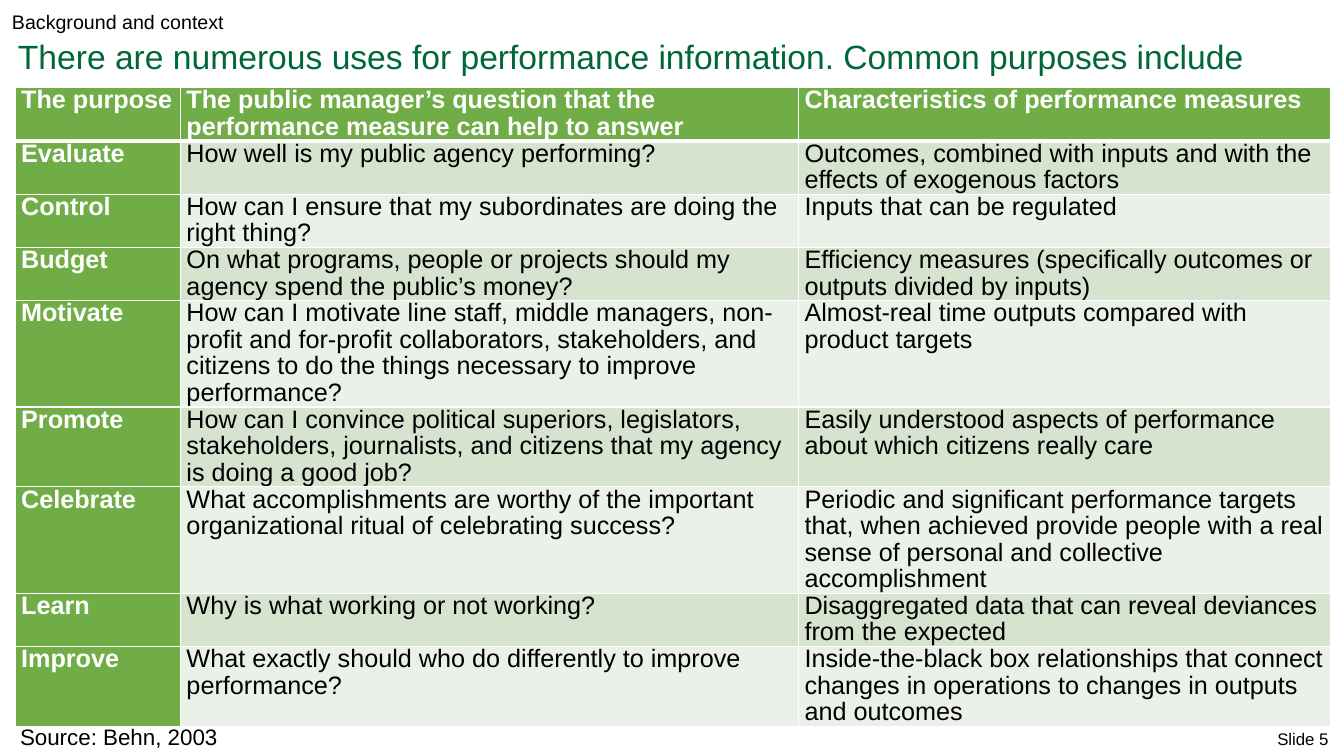
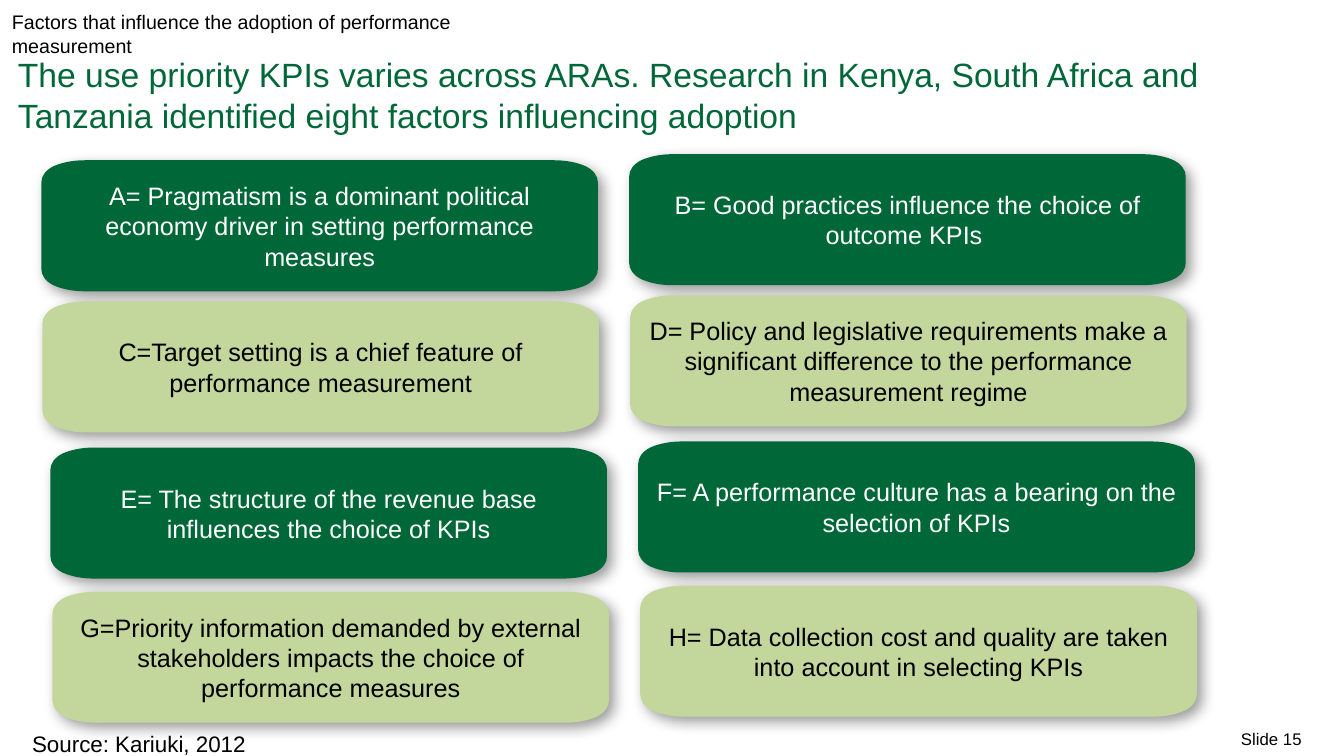
from lxml import etree
from pptx import Presentation
from pptx.dml.color import RGBColor
from pptx.enum.text import MSO_ANCHOR, PP_ALIGN
from pptx.oxml import parse_xml
from pptx.oxml.ns import qn
from pptx.util import Pt

PX = 9144
FONT = "Arial"
MIDDLE, TOP = MSO_ANCHOR.MIDDLE, MSO_ANCHOR.TOP
LEFT, CENTER = PP_ALIGN.LEFT, PP_ALIGN.CENTER
BLACK = RGBColor(0x00, 0x00, 0x00)
WHITE = RGBColor(0xFF, 0xFF, 0xFF)
DARK_GREEN = RGBColor(0x00, 0x68, 0x38)
LIGHT_GREEN = RGBColor(0xC3, 0xD6, 0x9B)
HEADER_GREEN = RGBColor(0x70, 0xAD, 0x47)
BANDS = [RGBColor(0xD5, 0xE3, 0xCF), RGBColor(0xEB, 0xF1, 0xE9)]
NS = "http://schemas.openxmlformats.org/drawingml/2006/main"
SHADOW = (
    f'<a:effectLst xmlns:a="{NS}">'
    '<a:outerShdw blurRad="127000" dist="63500" dir="2700000" algn="tl" rotWithShape="0">'
    '<a:srgbClr val="000000"><a:alpha val="40000"/></a:srgbClr>'
    '</a:outerShdw></a:effectLst>'
)


def write(tf, text, size, color, bold=False, align=LEFT):
    p = tf.paragraphs[0]
    p.alignment = align
    r = p.add_run()
    r.text = text
    for name, value in {"name": FONT, "size": Pt(size), "bold": bold}.items():
        setattr(r.font, name, value)
    r.font.color.rgb = color
    return p


def add_text(s, box, text, size, color=BLACK, anchor=TOP):
    tf = s.shapes.add_textbox(*[v * PX for v in box]).text_frame
    tf.word_wrap = True
    tf.vertical_anchor = anchor
    write(tf, text, size, color)


prs = Presentation()
prs.slide_width, prs.slide_height = 1333 * PX, 750 * PX

PAGES = [
    {
        "number": ("Slide 5", (1257, 719, 73, 28)),
        "section": ("Background and context", (2, 5, 231, 34)),
        "title": (
            "There are numerous uses for performance information. Common purposes include",
            (8, 31, 1315, 50),
        ),
        "source": ("Source: Behn, 2003", (10, 712, 218, 37)),
    },
    {
        "number": ("Slide 15", (1221, 718, 108, 29)),
        "section": (
            "Factors that influence the adoption of performance measurement",
            (2, 5, 577, 34),
        ),
        "title": (
            "The use priority KPIs varies across ARAs. Research in Kenya, South Africa "
            "and Tanzania identified eight factors influencing adoption",
            (8, 49, 1294, 91),
        ),
        "source": ("Source: Kariuki, 2012", (22, 719, 235, 37)),
    },
]
STYLES = {
    "number": (12, BLACK, MIDDLE),
    "section": (14, BLACK, TOP),
    "title": (24, DARK_GREEN, TOP),
    "source": (16, BLACK, TOP),
}
slides = []
for page in PAGES:
    s = prs.slides.add_slide(prs.slide_layouts[6])
    for part, style in STYLES.items():
        text, box = page[part]
        add_text(s, box, text, *style)
    slides.append(s)
uses, factors = slides

ROWS = [
    ("The purpose",
     "The public manager’s question that the performance measure can help to answer",
     "Characteristics of performance measures"),
    ("Evaluate",
     "How well is my public agency performing?",
     "Outcomes, combined with inputs and with the effects of exogenous factors"),
    ("Control",
     "How can I ensure that my subordinates are doing the right thing?",
     "Inputs that can be regulated"),
    ("Budget",
     "On what programs, people or projects should my agency spend the public’s money?",
     "Efficiency measures (specifically outcomes or outputs divided by inputs)"),
    ("Motivate",
     "How can I motivate line staff, middle managers, non-profit and for-profit "
     "collaborators, stakeholders, and citizens to do the things necessary to improve "
     "performance?",
     "Almost-real time outputs compared with product targets"),
    ("Promote",
     "How can I convince political superiors, legislators, stakeholders, journalists, "
     "and citizens that my agency is doing a good job?",
     "Easily understood aspects of performance about which citizens really care"),
    ("Celebrate",
     "What accomplishments are worthy of the important organizational ritual of "
     "celebrating success?",
     "Periodic and significant performance targets that, when achieved provide people "
     "with a real sense of personal and collective accomplishment"),
    ("Learn",
     "Why is what working or not working?",
     "Disaggregated data that can reveal deviances from the expected"),
    ("Improve",
     "What exactly should who do differently to improve performance?",
     "Inside-the-black box relationships that connect changes in operations to changes "
     "in outputs and outcomes"),
]
COL_WIDTHS = [164, 613, 528]
ROW_HEIGHTS = [51, 34, 34, 51, 85, 68, 68, 34, 51]
TABLE_H = 633
frame = uses.shapes.add_table(
    len(ROWS), len(COL_WIDTHS), 15 * PX, 87 * PX, sum(COL_WIDTHS) * PX, TABLE_H * PX
)
table = frame.table
table.horz_banding = False
for column, width in zip(table.columns, COL_WIDTHS):
    column.width = width * PX
for i, (texts, height) in enumerate(zip(ROWS, ROW_HEIGHTS)):
    table.rows[i].height = height * PX
    for j, text in enumerate(texts):
        cell = table.cell(i, j)
        heading = i == 0 or j == 0
        margins = {"margin_left": 6, "margin_right": 6, "margin_top": 0, "margin_bottom": 0}
        for name, value in margins.items():
            setattr(cell, name, value * PX)
        tcPr = cell._tc.get_or_add_tcPr()
        for side in "LRTB":
            thick = (i, side) in [(0, "B"), (1, "T")]
            ln = etree.SubElement(tcPr, qn(f"a:ln{side}"), w=str(Pt(3 if thick else 1)))
            fill = etree.SubElement(ln, qn("a:solidFill"))
            etree.SubElement(fill, qn("a:srgbClr"), val=str(WHITE))
        cell.fill.solid()
        cell.fill.fore_color.rgb = HEADER_GREEN if heading else BANDS[(i - 1) % 2]
        p = write(cell.text_frame, text, 18, WHITE if heading else BLACK, heading)
        p.line_spacing = Pt(19)
        p.space_after = Pt(6)
frame.height = TABLE_H * PX

CARD_W, CARD_H = 552, 130
RIGHT_DX, RIGHT_DY = 583, -6
CARD_ROWS = [
    (41, 159,
     "A= Pragmatism is a dominant political economy driver in setting performance measures",
     "B= Good practices influence the choice of outcome KPIs "),
    (42, 299,
     "C=Target setting is a chief feature of performance measurement",
     "D= Policy and legislative requirements make a significant difference to the "
     "performance measurement regime"),
    (50, 444,
     "E= The structure of the revenue base influences the choice of KPIs",
     "F= A performance culture has a bearing on the selection of KPIs"),
    (52, 587,
     "G=Priority information demanded by external stakeholders impacts the choice of "
     "performance measures",
     "H= Data collection cost and quality are taken into account in selecting KPIs"),
]
CORNER = [(0, 22), (0, 16), (4, 10), (12, 6), (21, 2), (32, 0), (43, 0)]
top_edge = CORNER + [(CARD_W - x, y) for x, y in reversed(CORNER)]
outline = top_edge + [(CARD_W - x, CARD_H - y) for x, y in top_edge]

for i, (left, top, *texts) in enumerate(CARD_ROWS):
    fill, color = [(DARK_GREEN, WHITE), (LIGHT_GREEN, BLACK)][i % 2]
    for j, text in enumerate(texts):
        x, y = left + j * RIGHT_DX, top + j * RIGHT_DY
        points = [((x + dx) * PX, (y + dy) * PX) for dx, dy in outline]
        builder = factors.shapes.build_freeform(*points[0])
        builder.add_line_segments(points[1:], close=True)
        sp = builder.convert_to_shape()
        segments = list(sp._element.iter(qn("a:lnTo")))
        for corner in range(0, len(outline), len(CORNER)):
            for first in (corner, corner + 3):
                curve = etree.Element(qn("a:cubicBezTo"))
                segments[first].addprevious(curve)
                for segment in segments[first:first + 3]:
                    curve.append(segment[0])
                    segment.getparent().remove(segment)
        sp.fill.solid()
        sp.fill.fore_color.rgb = fill
        sp.line.fill.background()
        sp._element.spPr.append(parse_xml(SHADOW))
        tf = sp.text_frame
        tf.word_wrap = True
        tf.vertical_anchor = MIDDLE
        for side in ("left", "right", "top", "bottom"):
            setattr(tf, f"margin_{side}", 14 * PX)
        write(tf, text, 18, color, align=CENTER)

prs.save("out.pptx")
